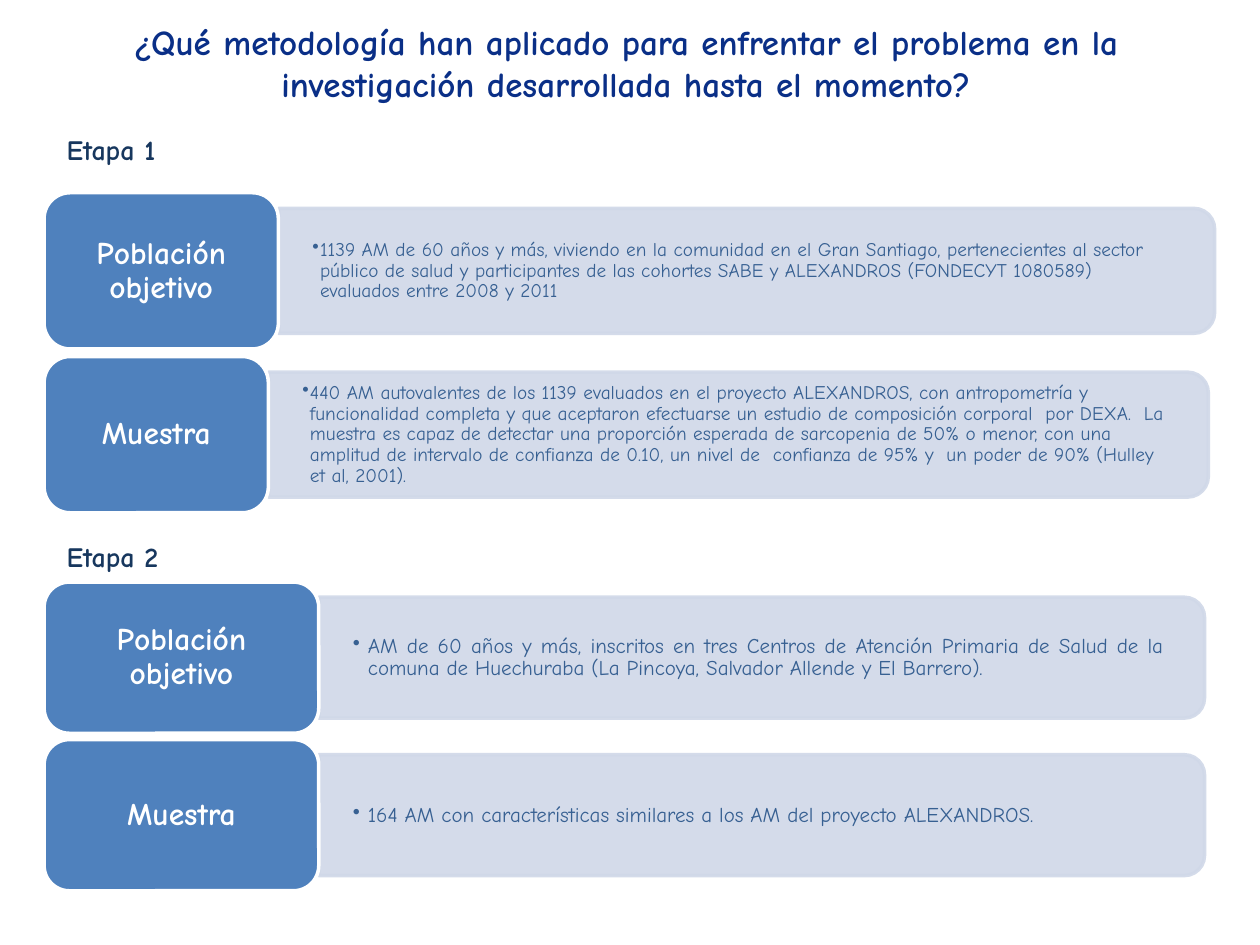
from dataclasses import dataclass

from lxml import etree
from pptx import Presentation
from pptx.dml.color import RGBColor
from pptx.enum.shapes import MSO_SHAPE
from pptx.enum.text import MSO_ANCHOR, MSO_AUTO_SIZE, PP_ALIGN
from pptx.oxml.ns import qn
from pptx.util import Inches, Pt

LABEL_SHAPE = MSO_SHAPE.ROUNDED_RECTANGLE
BAR_SHAPE = MSO_SHAPE.ROUND_2_SAME_RECTANGLE
MIDDLE = MSO_ANCHOR.MIDDLE
LEFT, CENTER, JUSTIFY = PP_ALIGN.LEFT, PP_ALIGN.CENTER, PP_ALIGN.JUSTIFY
NO_AUTOFIT = MSO_AUTO_SIZE.NONE
TITLE_ONLY = 5
SLIDE_WIDTH, SLIDE_HEIGHT = Inches(10), Inches(7.5)


@dataclass(frozen=True)
class Theme:
    font: str = "Comic Neue"
    title: str = "0A2F87"
    stage: str = "17375E"
    label: str = "4F81BD"
    bar: str = "D0D8E8"
    bar_opacity: int = 90
    detail: str = "376092"
    white: str = "FFFFFF"
    title_size: int = 20
    stage_size: int = 16
    label_size: int = 18
    outline: int = 2


THEME = Theme()
LABEL_LEFT = 3.5
BAR_SHARE = 0.8  # bar height as a share of its label's height

# Lengths are in grid units: hundredths of the slide's width
STAGES = [
    dict(
        name="Etapa 1", name_box=(4.3, 6.8, 65.4, 10.1),
        top=15.3, height=12.4, step=13, size=11, indent=0.6, align=LEFT,
        rows=[
            ("Población objetivo", 18.6, 74.3,
             "1139 AM de 60 años y más, viviendo en la comunidad en el Gran "
             "Santiago, pertenecientes al sector público de salud y "
             "participantes de las cohortes SABE y ALEXANDROS (FONDECYT "
             "1080589) evaluados entre 2008 y 2011"),
            ("Muestra", 17.8, 74.6,
             "440 AM autovalentes de los 1139 evaluados en el proyecto "
             "ALEXANDROS, con antropometría y funcionalidad completa y que "
             "aceptaron efectuarse un estudio de composición corporal  por "
             "DEXA.  La muestra es capaz de detectar una proporción esperada "
             "de sarcopenia de 50% o menor, con una amplitud de intervalo de "
             "confianza de 0.10, un nivel de  confianza de 95% y  un poder de "
             "90% (Hulley et al, 2001)."),
        ],
    ),
    dict(
        name="Etapa 2", name_box=(4.3, 39.1, 16.5, 10.1),
        top=46.2, height=12, step=12.5, size=12, indent=1.2, align=JUSTIFY,
        rows=[
            ("Población objetivo", 21.8, 70.3,
             "AM de 60 años y más, inscritos en tres Centros de Atención "
             "Primaria de Salud de la comuna de Huechuraba (La Pincoya, "
             "Salvador Allende y El Barrero)."),
            ("Muestra", 21.8, 70.3,
             "164 AM con características similares a los AM del proyecto "
             "ALEXANDROS."),
        ],
    ),
]


def grid(units):
    return round(SLIDE_WIDTH * units / 100)


def place(box):
    return [grid(units) for units in box]


def rgb(color):
    return RGBColor.from_string(color)


def write(shape, text, *, size, color, bold=False, align=LEFT,
          insets=(1, 0.5), line_spacing=None, bullet_indent=None):
    """Fill a shape with one formatted paragraph."""
    frame = shape.text_frame
    frame.word_wrap = True
    frame.auto_size = NO_AUTOFIT
    frame.vertical_anchor = MIDDLE
    frame.margin_left = frame.margin_right = grid(insets[0])
    frame.margin_top = frame.margin_bottom = grid(insets[1])
    paragraph = frame.paragraphs[0]
    paragraph.alignment = align
    if line_spacing:
        paragraph.line_spacing = line_spacing
    if bullet_indent:
        properties = paragraph._p.get_or_add_pPr()
        properties.set("marL", str(grid(bullet_indent)))
        properties.set("indent", str(-grid(bullet_indent)))
        etree.SubElement(properties, qn("a:buChar")).set("char", "•")
    run = paragraph.add_run()
    run.text = text
    run.font.name = THEME.font
    run.font.size = Pt(size)
    run.font.bold = bold
    run.font.color.rgb = rgb(color)


def add_panel(slide, preset, box, fill, line, opacity=100):
    """Add a filled, outlined shape without shadow."""
    panel = slide.shapes.add_shape(preset, *place(box))
    panel.shadow.inherit = False
    panel.fill.solid()
    panel.fill.fore_color.rgb = rgb(fill)
    panel.line.color.rgb = rgb(line)
    panel.line.width = Pt(THEME.outline)
    if opacity < 100:
        for color in panel._element.spPr.iter(qn("a:srgbClr")):
            etree.SubElement(color, qn("a:alpha")).set("val", str(opacity * 1000))
    return panel


def add_bar(slide, left, middle, width, height):
    """Add a bar rounded on its right: a turned shape with a round top."""
    box = (left + (width - height) / 2, middle - width / 2, height, width)
    bar = add_panel(slide, BAR_SHAPE, box, THEME.bar, THEME.bar,
                    THEME.bar_opacity)
    bar.rotation = 90


def add_row(slide, stage, index):
    name, label_width, bar_width, detail = stage["rows"][index]
    top, height = stage["top"] + index * stage["step"], stage["height"]
    middle, bar_left = top + height / 2, LABEL_LEFT + label_width
    bar_height = height * BAR_SHARE
    add_bar(slide, bar_left, middle, bar_width, bar_height)

    # Detail text, kept clear of the bar's rounded corners
    detail_height = bar_height * 0.9
    detail_box = slide.shapes.add_textbox(*place(
        (bar_left, middle - detail_height / 2, bar_width - 0.5, detail_height)))
    write(detail_box, detail, size=stage["size"], color=THEME.detail,
          align=stage["align"], insets=(2.7, 1.4), line_spacing=0.9,
          bullet_indent=stage["indent"])

    # Label over the bar's left end
    label = add_panel(slide, LABEL_SHAPE, (LABEL_LEFT, top, label_width, height),
                      THEME.label, THEME.white)
    write(label, name, size=THEME.label_size, color=THEME.white, bold=True,
          align=CENTER, insets=(0.7, 0.4), line_spacing=0.9)


def add_stage(slide, stage):
    heading = slide.shapes.add_textbox(*place(stage["name_box"]))
    write(heading, stage["name"], size=THEME.stage_size, color=THEME.stage,
          bold=True)
    for index in range(len(stage["rows"])):
        add_row(slide, stage, index)


def add_title(slide, text):
    title = slide.shapes.title
    title.left, title.top, title.width, title.height = place((4.4, 0, 90.6, 9.9))
    write(title, text, size=THEME.title_size, color=THEME.title, bold=True,
          align=CENTER)


def main():
    deck = Presentation()
    deck.slide_width, deck.slide_height = SLIDE_WIDTH, SLIDE_HEIGHT
    slide = deck.slides.add_slide(deck.slide_layouts[TITLE_ONLY])
    add_title(slide, "¿Qué metodología han aplicado para enfrentar el problema "
                     "en la investigación desarrollada hasta el momento?")
    for stage in STAGES:
        add_stage(slide, stage)
    deck.save("out.pptx")


if __name__ == "__main__":
    main()
